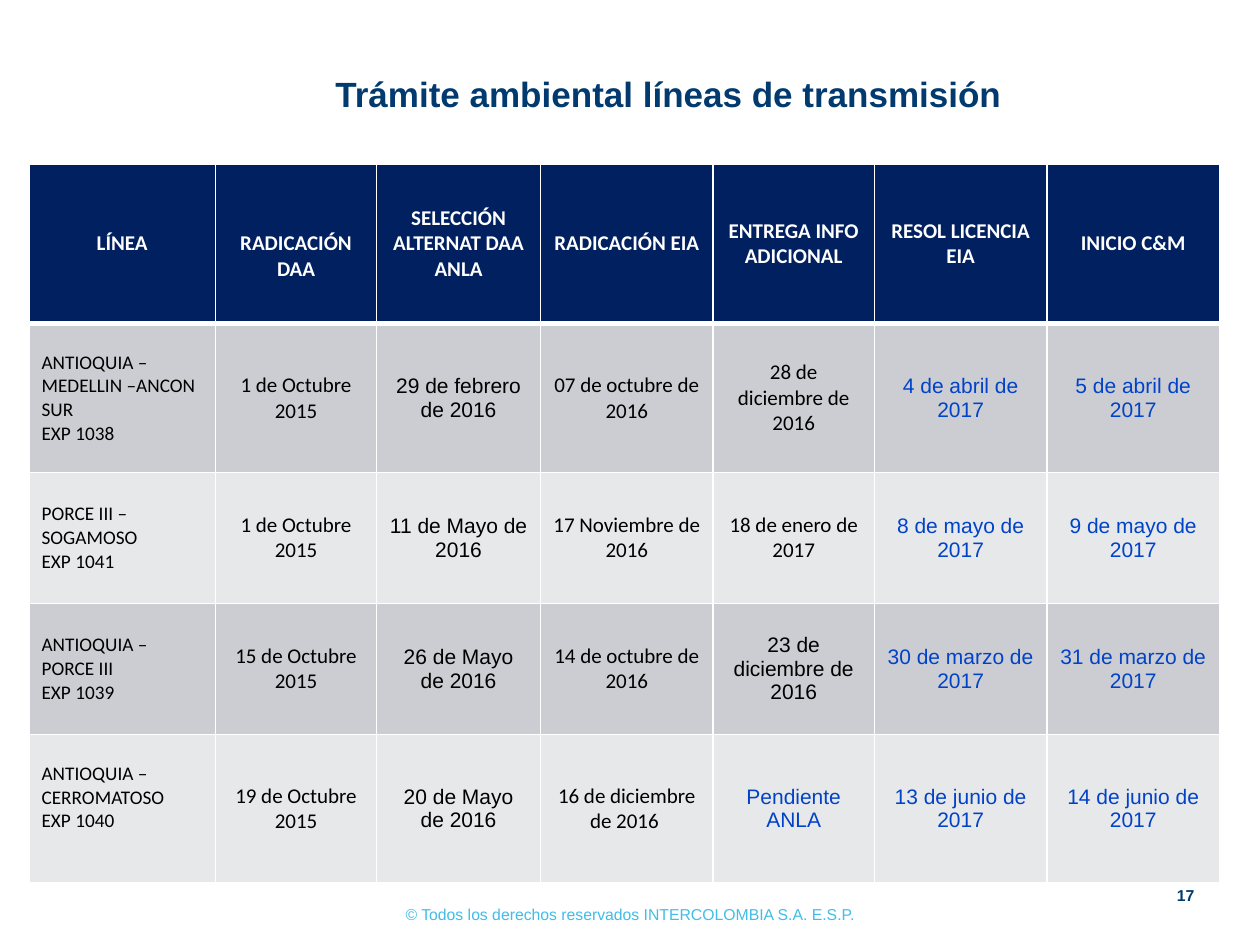
import pptx
import pptx.util
import pptx.dml.color
import pptx.enum.text
import pptx.oxml
import pptx.oxml.ns
from pptx.util import Inches

COLORS = {"navy": "003A6F", "sky": "40BDE8", "header": "002060", "white": "FFFFFF",
          "black": "000000", "blue": "0042C8", "dark band": "CCCDD2", "light band": "E7E8EA"}
ALIGN = pptx.enum.text.PP_ALIGN
ANCHOR = pptx.enum.text.MSO_ANCHOR

TITLE = "Trámite ambiental líneas de transmisión "
COPYRIGHT = "© Todos los derechos reservados INTERCOLOMBIA S.A. E.S.P."
PAGE_NUMBER = "17"

HEADERS = ["LÍNEA", "RADICACIÓN DAA", "SELECCIÓN ALTERNAT DAA ANLA", "RADICACIÓN EIA",
           "ENTREGA INFO ADICIONAL", "RESOL LICENCIA EIA", "INICIO C&M"]
LINES = [
    ["ANTIOQUIA – MEDELLIN –ANCON SUR\nEXP 1038", "1 de Octubre 2015", "29 de febrero de 2016",
     "07 de octubre de 2016", "28 de diciembre de 2016", "4 de abril de 2017", "5 de abril de 2017"],
    ["PORCE III – SOGAMOSO\nEXP 1041", "1 de Octubre 2015", "11 de Mayo de 2016",
     "17 Noviembre de 2016", "18 de enero de 2017", "8 de mayo de 2017", "9 de mayo de 2017"],
    ["ANTIOQUIA – PORCE III\nEXP 1039", "15 de Octubre 2015", "26 de Mayo de 2016",
     "14 de octubre de 2016", "23 de diciembre de 2016", "30 de marzo de 2017", "31 de marzo de 2017"],
    ["ANTIOQUIA – CERROMATOSO\nEXP 1040", "19 de Octubre 2015", "20 de Mayo de 2016",
     "16 de diciembre de 2016 ", "Pendiente ANLA", "13 de junio de 2017", "14 de junio de 2017"],
]
COLUMN_WIDTHS = [1.48, 1.28, 1.3, 1.37, 1.28, 1.37, 1.37]
ROW_HEIGHTS = [1.27, 1.18, 1.04, 1.04, 1.18]

# (row, column) exceptions to the column styles
COLUMN_FONTS = ["Calibri", "Calibri", "Arial", "Calibri", "Calibri", "Arial", "Arial"]
ARIAL_CELLS = {(3, 4), (4, 4)}
PENDING_CELLS = {(4, 4)}
FIRST_FORECAST_COLUMN = 5
# Extra margins that shift a cell's text off centre
LOWERED_CELL, RAISED_CELL = (0, 1), (4, 0)


def rgb(name):
    return pptx.dml.color.RGBColor.from_string(COLORS[name])


def write(frame, text, size, font, color, bold=False, align=ALIGN.CENTER):
    for index, line in enumerate(text.split("\n")):
        paragraph = frame.paragraphs[0] if index == 0 else frame.add_paragraph()
        paragraph.alignment = align
        run = paragraph.add_run()
        run.text = line
        run.font.size = pptx.util.Pt(size)
        run.font.name = font
        run.font.bold = bold
        run.font.color.rgb = rgb(color)


def add_text(slide, box, text, size, color, bold=False, anchor=ANCHOR.TOP):
    frame = slide.shapes.add_textbox(*map(Inches, box)).text_frame
    frame.word_wrap = True
    frame.vertical_anchor = anchor
    write(frame, text, size, "Arial", color, bold)
    return frame


def set_borders(cell, bottom_width, top_width):
    properties = cell._tc.get_or_add_tcPr()
    widths = {"lnL": 1, "lnR": 1, "lnT": top_width, "lnB": bottom_width}
    for index, (tag, width) in enumerate(widths.items()):
        properties.insert(index, pptx.oxml.parse_xml(
            f'<a:{tag} {pptx.oxml.ns.nsdecls("a")} w="{pptx.util.Pt(width)}"><a:solidFill>'
            f'<a:srgbClr val="{COLORS["white"]}"/></a:solidFill></a:{tag}>'))


def cell_style(row, column):
    if row == 0:
        return {"size": 12, "font": "Calibri", "color": "white", "bold": True}
    if column == 0:
        return {"size": 11, "font": "Calibri", "color": "black", "align": ALIGN.LEFT}
    forecast = column >= FIRST_FORECAST_COLUMN or (row, column) in PENDING_CELLS
    font = "Arial" if (row, column) in ARIAL_CELLS else COLUMN_FONTS[column]
    return {"size": 12, "font": font, "color": "blue" if forecast else "black"}


def add_schedule(slide):
    rows = [HEADERS] + LINES
    table = slide.shapes.add_table(
        len(rows), len(HEADERS), Inches(0.23), Inches(1.3),
        Inches(sum(COLUMN_WIDTHS)), Inches(sum(ROW_HEIGHTS))).table
    for column, width in zip(table.columns, COLUMN_WIDTHS):
        column.width = Inches(width)
    for row, height in zip(table.rows, ROW_HEIGHTS):
        row.height = Inches(height)
    for r, texts in enumerate(rows):
        fill = "header" if r == 0 else "dark band" if r % 2 else "light band"
        for c, text in enumerate(texts):
            cell = table.cell(r, c)
            cell.vertical_anchor = ANCHOR.MIDDLE
            cell.fill.solid()
            cell.fill.fore_color.rgb = rgb(fill)
            set_borders(cell, 3 if r == 0 else 1, 3 if r == 1 else 1)
            write(cell.text_frame, text, **cell_style(r, c))
    table.cell(*LOWERED_CELL).margin_top = Inches(0.25)
    table.cell(*RAISED_CELL).margin_bottom = Inches(0.23)


def main():
    presentation = pptx.Presentation()
    presentation.slide_width, presentation.slide_height = Inches(10), Inches(7.5)
    slide = presentation.slides.add_slide(presentation.slide_layouts[6])
    add_text(slide, (2.72, 7.13, 4.56, 0.25), COPYRIGHT, 9, "sky")
    add_text(slide, (1.53, 0.41, 7.63, 0.67), TITLE, 20, "navy", True, ANCHOR.MIDDLE)
    number = add_text(slide, (9.16, 6.97, 0.4, 0.26), PAGE_NUMBER, 9, "navy", True, ANCHOR.BOTTOM)
    number.margin_right = 0
    add_schedule(slide)
    presentation.save("out.pptx")


if __name__ == "__main__":
    main()
